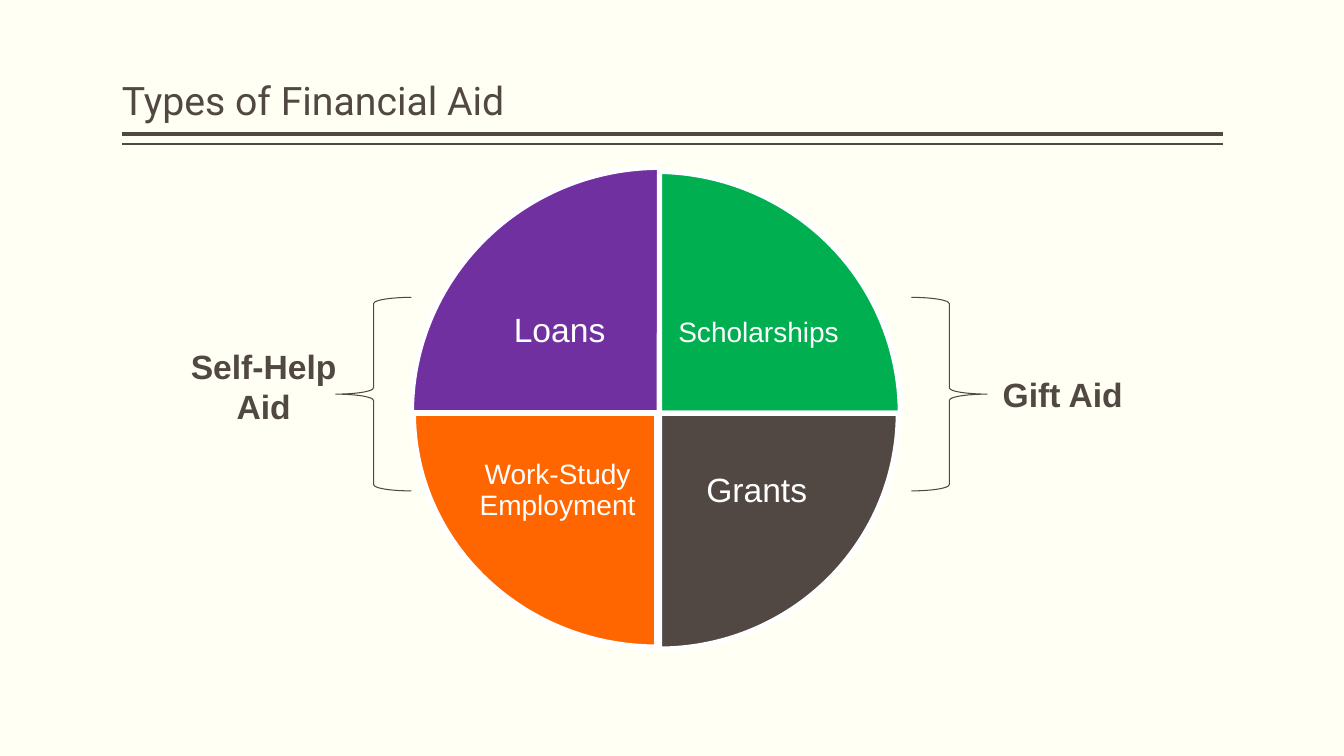
from dataclasses import dataclass

from lxml import etree
from pptx import Presentation
from pptx.dml.color import RGBColor
from pptx.enum.shapes import MSO_CONNECTOR, MSO_SHAPE
from pptx.enum.text import MSO_ANCHOR, MSO_AUTO_SIZE, PP_ALIGN
from pptx.oxml.ns import qn
from pptx.util import Inches, Pt

STRAIGHT = MSO_CONNECTOR.STRAIGHT
PIE, LEFT_BRACE, RIGHT_BRACE = MSO_SHAPE.PIE, MSO_SHAPE.LEFT_BRACE, MSO_SHAPE.RIGHT_BRACE
LEFT, CENTER, RIGHT = PP_ALIGN.LEFT, PP_ALIGN.CENTER, PP_ALIGN.RIGHT
TOP, MIDDLE, BOTTOM = MSO_ANCHOR.TOP, MSO_ANCHOR.MIDDLE, MSO_ANCHOR.BOTTOM
QUARTER_TURN = 54  # 90 degrees in the units of the pie's adjustments


@dataclass(frozen=True)
class Theme:
    background: RGBColor = RGBColor.from_string("FFFFF3")
    ink: RGBColor = RGBColor.from_string("514843")
    white: RGBColor = RGBColor.from_string("FFFFFF")
    green: RGBColor = RGBColor.from_string("00B050")
    orange: RGBColor = RGBColor.from_string("FF6600")
    purple: RGBColor = RGBColor.from_string("7030A0")
    heading_font: str = "Roboto"
    body_font: str = "Arial"
    title_size: int = 28
    large: int = 24
    small: int = 20


THEME = Theme()

# Label, fill, quadrant (0 = lower right, clockwise), type size, alignment,
# pie box and label box, both measured from the corner of the wheel
WEDGES = [
    ("Scholarships", THEME.green, 3, THEME.small, RIGHT,
     (0, 0.04, 4.85, 4.8), (2.48, 0.93, 1.79, 1.43)),
    ("Grants", THEME.ink, 0, THEME.large, CENTER,
     (0.09, 0.1, 4.74, 4.68), (2.55, 2.52, 1.75, 1.39)),
    ("Work-Study Employment", THEME.orange, 1, THEME.small, CENTER,
     (0.02, 0.12, 4.83, 4.64), (0.56, 2.52, 1.78, 1.38)),
    ("Loans", THEME.purple, 2, THEME.large, CENTER,
     (0, 0, 4.92, 4.87), (0.56, 0.9, 1.82, 1.45)),
]


def inches(box):
    return [Inches(length) for length in box]


def write(frame, text, size, color, font=THEME.body_font, align=CENTER,
          anchor=TOP, bold=False, spacing=None):
    frame.word_wrap = True
    frame.vertical_anchor = anchor
    frame.text = text
    paragraph = frame.paragraphs[0]
    paragraph.alignment = align
    paragraph.line_spacing = spacing
    style = paragraph.runs[0].font
    style.name, style.size, style.bold = font, Pt(size), bold
    style.color.rgb = color


def add_heading(slide, left, top, width, height):
    """Title with a thick and a thin rule beneath it."""
    title = slide.shapes.title
    title.left, title.top, title.width, title.height = inches((left, top, width, height))
    frame = title.text_frame
    frame.auto_size = MSO_AUTO_SIZE.NONE
    frame.margin_left = frame.margin_right = 0
    write(frame, "Types of Financial Aid", THEME.title_size, THEME.ink,
          THEME.heading_font, LEFT, BOTTOM, spacing=0.9)
    for gap, weight in ((0.05, 3), (0.15, 1)):
        y = Inches(top + height + gap)
        rule = slide.shapes.add_connector(
            STRAIGHT, Inches(left + width), y, Inches(left), y)
        rule.line.color.rgb = THEME.ink
        rule.line.width = Pt(weight)
        etree.SubElement(rule.line._get_or_add_ln().getparent(), qn("a:effectLst"))


def add_wheel(slide, left, top):
    def placed(box):
        x, y, width, height = box
        return inches((left + x, top + y, width, height))

    for label, fill, quadrant, size, align, pie_box, label_box in WEDGES:
        wedge = slide.shapes.add_shape(PIE, *placed(pie_box))
        wedge.adjustments[0] = quadrant * QUARTER_TURN
        wedge.adjustments[1] = (quadrant + 1) % 4 * QUARTER_TURN
        wedge.shadow.inherit = False
        wedge.fill.solid()
        wedge.fill.fore_color.rgb = fill
        wedge.line.color.rgb = THEME.white
        wedge.line.width = Pt(3.78)

        frame = slide.shapes.add_textbox(*placed(label_box)).text_frame
        frame.margin_left = frame.margin_right = Inches(0.03)
        frame.margin_top = frame.margin_bottom = Inches(0.03)
        write(frame, label, size, THEME.white, align=align, anchor=MIDDLE, spacing=0.9)


def add_bracketed_group(slide, brace_kind, brace_box, name, name_box):
    """Brace beside the wheel and the name of the aid it embraces."""
    brace = slide.shapes.add_shape(brace_kind, *inches(brace_box))
    brace.shadow.inherit = False
    brace.fill.background()
    brace.line.color.rgb = THEME.ink
    brace.line.width = Pt(0.75)

    frame = slide.shapes.add_textbox(*inches(name_box)).text_frame
    write(frame, name, THEME.large, THEME.ink, bold=True)
    frame.auto_size = MSO_AUTO_SIZE.SHAPE_TO_FIT_TEXT


def main():
    deck = Presentation()
    deck.slide_width, deck.slide_height = Inches(13.33), Inches(7.5)
    slide = deck.slides.add_slide(deck.slide_layouts.get_by_name("Title Only"))
    slide.background.fill.solid()
    slide.background.fill.fore_color.rgb = THEME.background

    add_heading(slide, 1.21, 0.08, 10.92, 1.2)
    add_wheel(slide, 4.08, 1.66)
    add_bracketed_group(slide, RIGHT_BRACE, (9.04, 2.95, 0.75, 1.92),
                        "Gift Aid", (9.73, 3.66, 1.62, 0.5))
    add_bracketed_group(slide, LEFT_BRACE, (3.33, 2.95, 0.75, 1.92),
                        "Self-Help Aid", (1.78, 3.38, 1.67, 0.91))
    deck.save("out.pptx")


if __name__ == "__main__":
    main()
